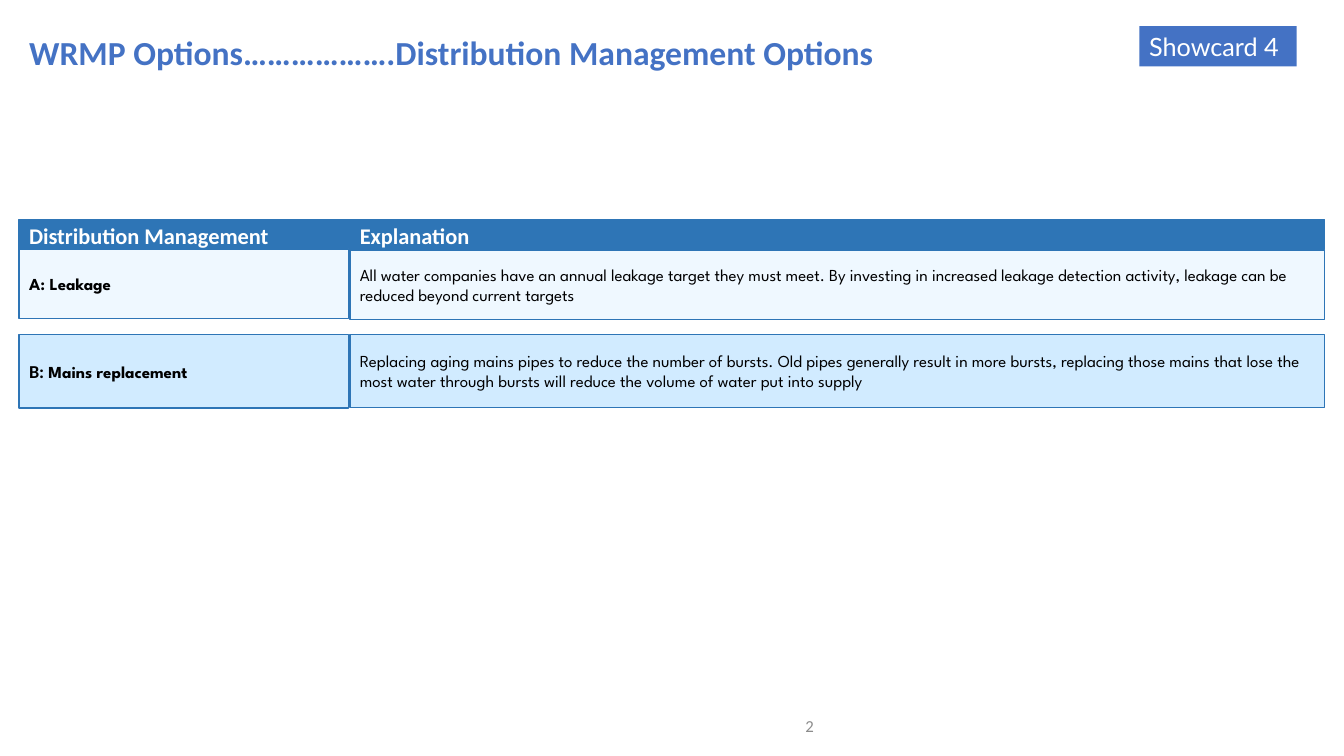
from dataclasses import dataclass
from typing import Optional

from pptx import Presentation
from pptx.dml.color import RGBColor
from pptx.enum.shapes import MSO_SHAPE
from pptx.enum.text import MSO_ANCHOR, PP_ALIGN
from pptx.util import Inches, Pt

RECT = MSO_SHAPE.RECTANGLE
TOP, MIDDLE = MSO_ANCHOR.TOP, MSO_ANCHOR.MIDDLE
LEFT, RIGHT = PP_ALIGN.LEFT, PP_ALIGN.RIGHT


@dataclass(frozen=True)
class Theme:
    blue: str = "4472C4"
    header: str = "2E75B6"
    pale: str = "EFF8FF"
    light: str = "D1EBFF"
    white: str = "FFFFFF"
    black: str = "000000"
    grey: str = "8C8C8C"
    base_font: str = "Calibri"
    card_font: str = "Lato"
    body_font: str = "League Spartan"
    title_size: int = 24
    card_size: int = 18
    header_size: int = 16
    letter_size: int = 13
    body_size: int = 12


@dataclass(frozen=True)
class Style:
    font: str
    size: int
    color: str
    bold: bool = False
    spacing: Optional[float] = None
    after: int = 0


@dataclass(frozen=True)
class Box:
    left: float
    top: float
    width: float
    height: float


@dataclass(frozen=True)
class Run:
    text: str
    style: Style


@dataclass(frozen=True)
class Cell:
    box: Box
    runs: tuple[Run, ...]


@dataclass(frozen=True)
class Row:
    fill: str
    cells: tuple[Cell, Cell]


T = Theme()
TITLE = Style(T.base_font, T.title_size, T.blue, True, spacing=0.9)
CARD = Style(T.card_font, T.card_size, T.white)
HEADER = Style(T.base_font, T.header_size, T.white, True, spacing=1.07, after=8)
LETTER = Style(T.base_font, T.letter_size, T.black, True)
OPTION = Style(T.body_font, T.body_size, T.black, True)
BODY = Style(T.body_font, T.body_size, T.black)
NUMBER = Style(T.base_font, T.body_size, T.grey)

# Column positions and widths
NAME_X, TEXT_X = 0.19, 3.47
NAME_W, TEXT_W = 3.27, 9.67

ROWS = (
    Row(T.header, (
        Cell(Box(NAME_X, 2.18, 3.54, 0.29), (Run("Distribution Management", HEADER),)),
        Cell(Box(TEXT_X, 2.18, TEXT_W, 0.29), (Run("Explanation", HEADER),)),
    )),
    Row(T.pale, (
        Cell(Box(NAME_X, 2.47, NAME_W, 0.69), (Run("A: Leakage", OPTION),)),
        Cell(Box(TEXT_X, 2.48, TEXT_W, 0.69), (Run(
            "All water companies have an annual leakage target they must meet. "
            "By investing in increased leakage detection activity, leakage can be "
            "reduced beyond current targets", BODY),)),
    )),
    Row(T.light, (
        Cell(Box(NAME_X, 3.32, NAME_W, 0.73),
             (Run("B: ", LETTER), Run("Mains replacement", OPTION))),
        Cell(Box(TEXT_X, 3.32, TEXT_W, 0.72), (Run(
            "Replacing aging mains pipes to reduce the number of bursts. Old pipes "
            "generally result in more bursts, replacing those mains that lose the "
            "most water through bursts will reduce the volume of water put into supply",
            BODY),)),
    )),
)


def set_font(font, style: Style) -> None:
    font.name = style.font
    font.size = Pt(style.size)
    font.bold = style.bold
    font.color.rgb = RGBColor.from_string(style.color)


def write(sp, runs: tuple[Run, ...], anchor=MIDDLE, align=LEFT) -> None:
    tf = sp.text_frame
    tf.word_wrap = True
    tf.vertical_anchor = anchor
    p = tf.paragraphs[0]
    p.alignment = align
    style = runs[0].style
    if style.spacing:
        p.line_spacing = style.spacing
    p.space_after = Pt(style.after)
    for run in runs:
        r = p.add_run()
        r.text = run.text
        if len(runs) > 1:
            set_font(r.font, run.style)
    if len(runs) == 1:
        set_font(p.font, style)


def place(box: Box) -> tuple:
    return tuple(Inches(v) for v in (box.left, box.top, box.width, box.height))


def add_text(shapes, box: Box, run: Run, align=LEFT) -> None:
    write(shapes.add_textbox(*place(box)), (run,), align=align)


def add_rect(shapes, box: Box, fill: str, runs: tuple[Run, ...],
             line: Optional[str] = None, anchor=MIDDLE) -> None:
    sp = shapes.add_shape(RECT, *place(box))
    sp.shadow.inherit = False
    sp.fill.solid()
    sp.fill.fore_color.rgb = RGBColor.from_string(fill)
    if line:
        sp.line.color.rgb = RGBColor.from_string(line)
        sp.line.width = Pt(1)
    else:
        sp.line.fill.background()
    write(sp, runs, anchor)


def main() -> None:
    prs = Presentation()
    prs.slide_width, prs.slide_height = Inches(13.33), Inches(7.5)
    s = prs.slides.add_slide(prs.slide_layouts[6])

    # Page number, title and showcard label
    add_text(s.shapes, Box(5.17, 7, 3, 0.4), Run("2", NUMBER), RIGHT)
    add_text(s.shapes, Box(0.19, 0.2, 11.5, 0.69),
             Run("WRMP Options……………….Distribution Management Options", TITLE))
    add_rect(s.shapes, Box(11.3, 0.26, 1.56, 0.4), T.blue,
             (Run("Showcard 4", CARD),), anchor=TOP)

    # Header and option rows, one group each
    for row in ROWS:
        group = s.shapes.add_group_shape()
        for cell in row.cells:
            add_rect(group.shapes, cell.box, row.fill, cell.runs, T.header)

    prs.save("out.pptx")


if __name__ == "__main__":
    main()
